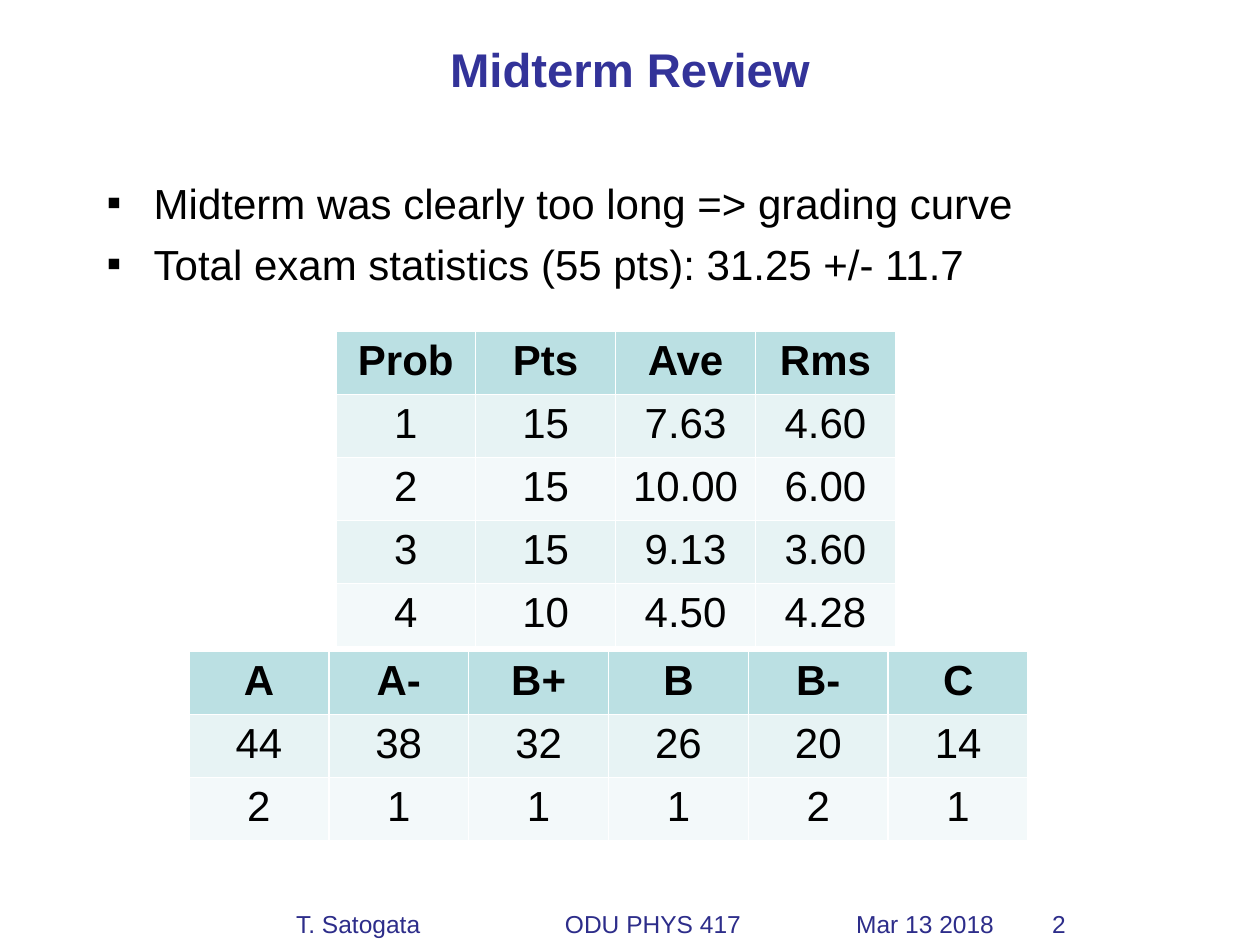
"""Build the midterm review slide with its score and grade tables."""
from lxml.etree import SubElement as Sub
from pptx import Presentation
from pptx.dml.color import RGBColor
from pptx.enum.text import MSO_ANCHOR as Anchor, PP_ALIGN as Align
from pptx.oxml.ns import qn
from pptx.util import Cm, Pt

NAVY = RGBColor(0x33, 0x33, 0x99)
BLUE = RGBColor(0x2D, 0x2D, 0x8A)
BLACK = RGBColor(0, 0, 0)
HEAD = RGBColor(0xBB, 0xE0, 0xE3)
BANDS = (RGBColor(0xE7, 0xF3, 0xF4), RGBColor(0xF3, 0xF9, 0xFA))

TITLE = "Midterm Review"
POINTS = [
    "Midterm was clearly too long => grading curve",
    "Total exam statistics (55 pts): 31.25 +/- 11.7",
]
GRADES = [
    ("A", "A-", "B+", "B", "B-", "C"),
    ("44", "38", "32", "26", "20", "14"),
    ("2", "1", "1", "1", "2", "1"),
]
SCORES = [
    ("Prob", "Pts", "Ave", "Rms"),
    ("1", "15", "7.63", "4.60"),
    ("2", "15", "10.00", "6.00"),
    ("3", "15", "9.13", "3.60"),
    ("4", "10", "4.50", "4.28"),
]
FOOTER = ("T. Satogata", "ODU PHYS 417", "Mar 13 2018")
STOPS = (5.42, 11.29)
PAGE = "2"
COL, ROW = 2.82, 1.05


def style(para, size, color, bold=False):
    for run in para.runs:
        font = run.font
        font.name, font.size, font.bold = "Arial", Pt(size), bold
        font.color.rgb = color


def add_text(slide, box, lines, size, color, bold=False):
    frame = slide.shapes.add_textbox(*map(Cm, box)).text_frame
    frame.word_wrap = True
    frame.text = "\n".join(lines)
    for para in frame.paragraphs:
        style(para, size, color, bold)
    return frame


def add_bullet(para):
    props = para._p.get_or_add_pPr()
    props.set("marL", str(Cm(0.95)))
    props.set("indent", str(-Cm(0.95)))
    Sub(props, qn("a:buFont"), typeface="Arial")
    Sub(props, qn("a:buChar"), char="▪")


def add_tabs(para, stops):
    tabs = Sub(para._p.get_or_add_pPr(), qn("a:tabLst"))
    for stop in stops:
        Sub(tabs, qn("a:tab"), pos=str(Cm(stop)), algn="l")


def add_grid(slide, left, top, rows):
    wide, high = len(rows[0]), len(rows)
    box = (left, top, COL * wide, ROW * high)
    table = slide.shapes.add_table(high, wide, *map(Cm, box)).table
    for r, row in enumerate(rows):
        for c, text in enumerate(row):
            cell = table.cell(r, c)
            cell.fill.solid()
            cell.fill.fore_color.rgb = BANDS[(r - 1) % 2] if r else HEAD
            para = cell.text_frame.paragraphs[0]
            para.text = text
            para.alignment = Align.CENTER
            style(para, 24, BLACK, r == 0)


def main():
    deck = Presentation()
    deck.slide_width, deck.slide_height = Cm(25.4), Cm(19.05)
    slide = deck.slides.add_slide(deck.slide_layouts[6])

    foot = add_text(slide, (5.72, 18.2, 15.45, 0.86), ["\t".join(FOOTER)], 14, BLUE)
    add_tabs(foot.paragraphs[0], STOPS)
    add_text(slide, (20.96, 18.2, 1.48, 0.86), [PAGE], 14, BLUE)

    title = add_text(slide, (1.9, 0.43, 21.6, 1.9), [TITLE], 27, NAVY, True)
    title.vertical_anchor = Anchor.MIDDLE
    title.paragraphs[0].alignment = Align.CENTER

    body = add_text(slide, (1.9, 3.45, 21.6, 13.5), POINTS, 24, BLACK)
    for i, para in enumerate(body.paragraphs):
        if i:
            para.space_before = Pt(6)
        add_bullet(para)

    add_grid(slide, 3.81, 13.13, GRADES)
    add_grid(slide, 6.77, 6.68, SCORES)
    deck.save("out.pptx")


if __name__ == "__main__":
    main()
